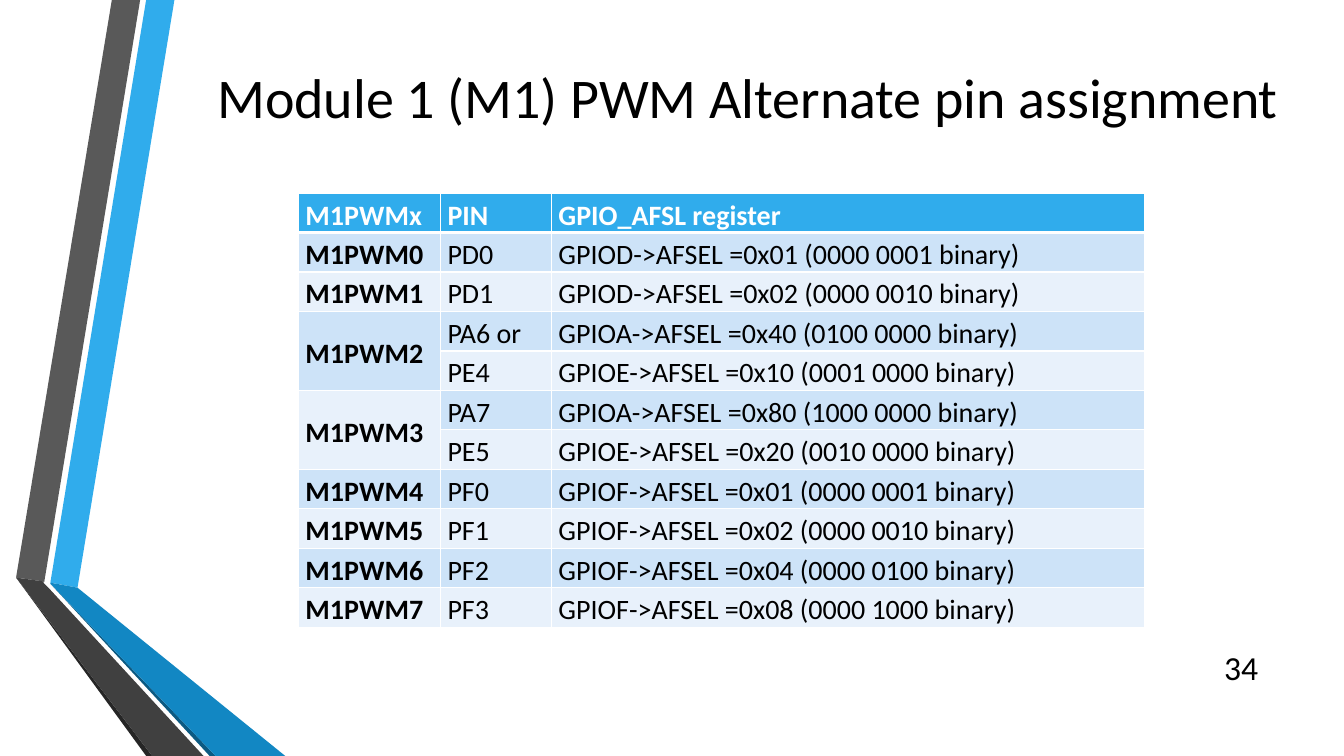
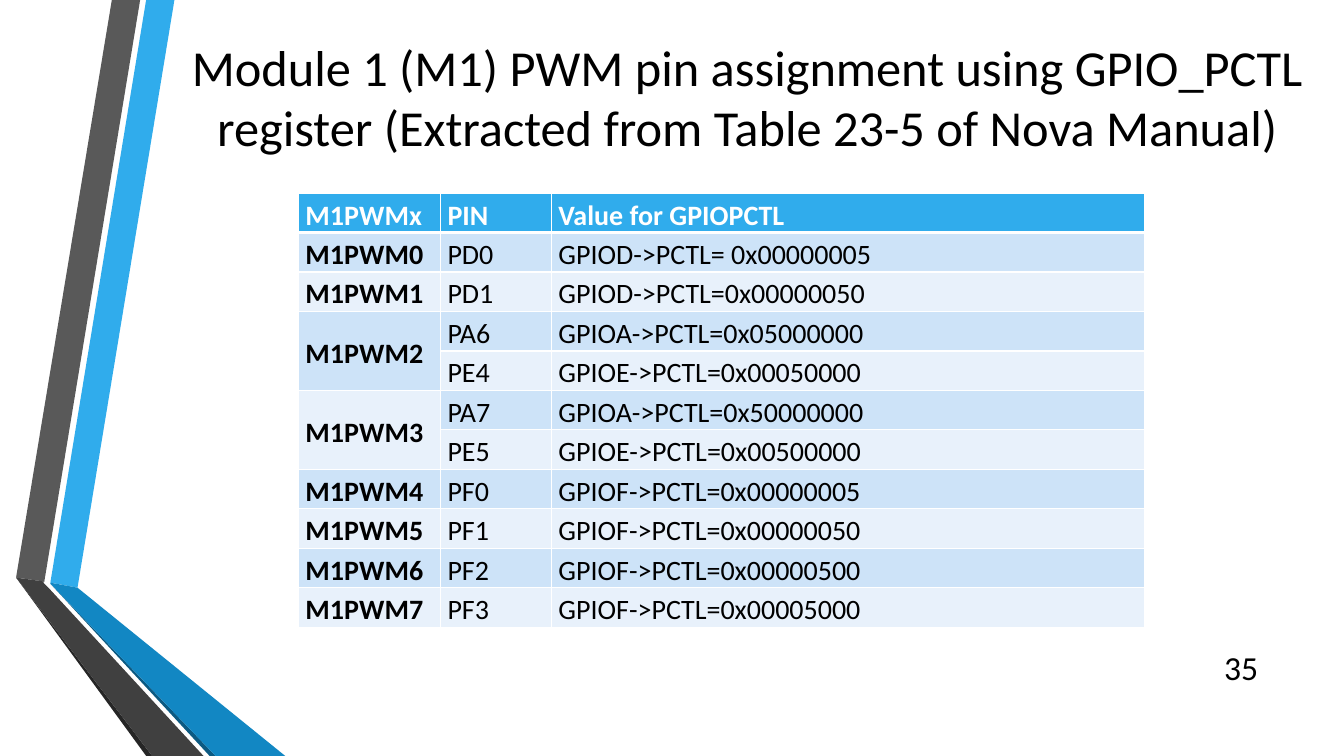
import dataclasses

import lxml.etree
import pptx
import pptx.dml.color
import pptx.enum.text
import pptx.oxml.ns
import pptx.util

Pt = pptx.util.Pt
Align = pptx.enum.text.PP_ALIGN
Anchor = pptx.enum.text.MSO_ANCHOR


@dataclasses.dataclass(frozen=True)
class Theme:
    font: str = "Calibri"
    ink: str = "000000"
    paper: str = "FFFFFF"
    head: str = "30ACEC"
    bands: tuple = ("CDE3F8", "E8F1FB")
    blue: str = "30ACEC"
    azure: str = "1287C3"
    navy: str = "0C5A82"
    gray: str = "595959"
    coal: str = "404040"
    black: str = "262626"
    title: int = 40
    small: int = 36
    number: int = 24
    cell: int = 20
    line: int = 1
    rule: int = 3


# Ribbon outlines, from back to front: theme colour and corners in points
RIBBONS = [
    ("blue", [(36, 416.2), (55.4, 419.8), (124.6, 0), (104.4, 0)]),
    ("gray", [(100.1, 0), (79.9, 0), (11.5, 412.6), (31.7, 415.4)]),
    ("black", [(11.5, 412.6), (104.4, 540), (108.7, 540)]),
    ("navy", [(36, 416.9), (149.8, 540), (154.1, 540)]),
    ("azure", [(36, 416.2), (36, 416.9), (154.1, 540), (203.8, 540), (55.4, 419.8)]),
    ("coal", [(145.4, 540), (34.6, 419.8), (31, 416.2), (31.7, 415.4),
              (11.5, 412.6), (108.7, 540)]),
]

# Pins that carry each output, M1PWM0 to M1PWM7
PINS = [["PD0"], ["PD1"], ["PA6", "PE4"], ["PA7", "PE5"],
        ["PF0"], ["PF1"], ["PF2"], ["PF3"]]


class Deck:
    def __init__(self, theme):
        self.theme = theme
        self.prs = pptx.Presentation()
        self.prs.slide_width, self.prs.slide_height = Pt(960), Pt(540)
        self.slide = None

    def color(self, code):
        return pptx.dml.color.RGBColor.from_string(code)

    def paint(self, fill, code):
        fill.solid()
        fill.fore_color.rgb = self.color(code)

    def start(self):
        self.slide = self.prs.slides.add_slide(self.prs.slide_layouts[6])
        self.paint(self.slide.background.fill, self.theme.paper)
        self.ribbons()

    def ribbons(self):
        group = self.slide.shapes.add_group_shape()
        for name, dots in RIBBONS:
            first, *rest = [(Pt(x), Pt(y)) for x, y in dots]
            pen = group.shapes.build_freeform(*first)
            pen.add_line_segments(rest, close=True)
            shape = pen.convert_to_shape()
            shape.shadow.inherit = False
            self.paint(shape.fill, getattr(self.theme, name))
            shape.line.fill.background()

    def run(self, para, text, size, code, bold=False):
        run = para.add_run()
        run.text = text
        run.font.name = self.theme.font
        run.font.size = Pt(size)
        run.font.bold = bold
        run.font.color.rgb = self.color(code)

    def text(self, text, box, size, align):
        frame = self.slide.shapes.add_textbox(*[Pt(v) for v in box]).text_frame
        frame.word_wrap = True
        frame.vertical_anchor = Anchor.MIDDLE
        para = frame.paragraphs[0]
        para.alignment = align
        self.run(para, text, size, self.theme.ink)

    def title(self, text, size):
        self.text(text, (108, 0, 852, 138), size, Align.CENTER)

    def number(self, value):
        self.text(str(value), (862.6, 462.2, 43.2, 28.8), self.theme.number, Align.RIGHT)

    def border(self, cell, side, width):
        props = cell._tc.get_or_add_tcPr()
        name = pptx.oxml.ns.qn
        line = lxml.etree.SubElement(props, name("a:ln" + side), w=str(Pt(width)))
        fill = lxml.etree.SubElement(line, name("a:solidFill"))
        lxml.etree.SubElement(fill, name("a:srgbClr"), val=self.theme.paper)

    def cell(self, cell, text, fill, row, bold=False):
        theme = self.theme
        # The thick rule lies between the header and the first body row
        thick = {0: "B", 1: "T"}.get(row)
        for side in "LRTB":
            self.border(cell, side, theme.rule if side == thick else theme.line)
        self.paint(cell.fill, fill)
        cell.margin_left = cell.margin_right = Pt(5)
        cell.margin_top = cell.margin_bottom = Pt(0)
        if text:
            para = cell.text_frame.paragraphs[0]
            para.line_spacing = 1.15
            ink = theme.ink if row else theme.paper
            self.run(para, text, theme.cell, ink, bold)

    def table(self, heads, value, labels):
        """Fill one row per pin; outputs with several pins share a name cell."""
        theme = self.theme
        count = 1 + sum(len(pins) for pins in PINS)
        widths, height = (101.5, 79.2, 424), 28.2
        box = (213.2, 138, sum(widths), count * height)
        grid = self.slide.shapes.add_table(
            count, len(widths), *[Pt(v) for v in box]).table
        for col, width in zip(grid.columns, widths):
            col.width = Pt(width)
        for line in grid.rows:
            line.height = Pt(height)

        # Header
        for col, head in enumerate(heads):
            self.cell(grid.cell(0, col), head, theme.head, 0, bold=True)

        # Body
        row = 1
        for index, pins in enumerate(PINS):
            top = row
            for pin in pins:
                name = f"M1PWM{index}" if row == top else ""
                self.cell(grid.cell(row, 0), name, theme.bands[index % 2], row, bold=True)
                band = theme.bands[(row - 1) % 2]
                self.cell(grid.cell(row, 1), labels.get(pin, pin), band, row)
                self.cell(grid.cell(row, 2), value(pin), band, row)
                row += 1
            if len(pins) > 1:
                grid.cell(top, 0).merge(grid.cell(row - 1, 0))
                grid.cell(top, 0).vertical_anchor = Anchor.MIDDLE


def afsel(pin):
    """Set the bit of the pin in its port."""
    mask = 1 << int(pin[2])
    bits = f"{mask:08b}"
    return f"GPIO{pin[1]}->AFSEL =0x{mask:02X} ({bits[:4]} {bits[4:]} binary)"


def pctl(pin):
    """Put function 5 in the four-bit field of the pin."""
    gap = " " if pin == "PD0" else ""
    return f"GPIO{pin[1]}->PCTL={gap}0x{5 << 4 * int(pin[2]):08X}"


def main():
    theme = Theme()
    deck = Deck(theme)
    pages = [
        ("Module 1 (M1) PWM Alternate pin assignment", theme.title,
         "GPIO_AFSL register", afsel, {"PA6": "PA6 or"}),
        ("Module 1 (M1) PWM pin assignment using GPIO_PCTL register "
         "(Extracted from Table 23-5 of Nova Manual)", theme.small,
         "Value for GPIOPCTL", pctl, {}),
    ]
    for number, (title, size, head, value, labels) in enumerate(pages, 34):
        deck.start()
        deck.title(title, size)
        deck.number(number)
        deck.table(("M1PWMx", "PIN", head), value, labels)
    deck.prs.save("out.pptx")


if __name__ == "__main__":
    main()
